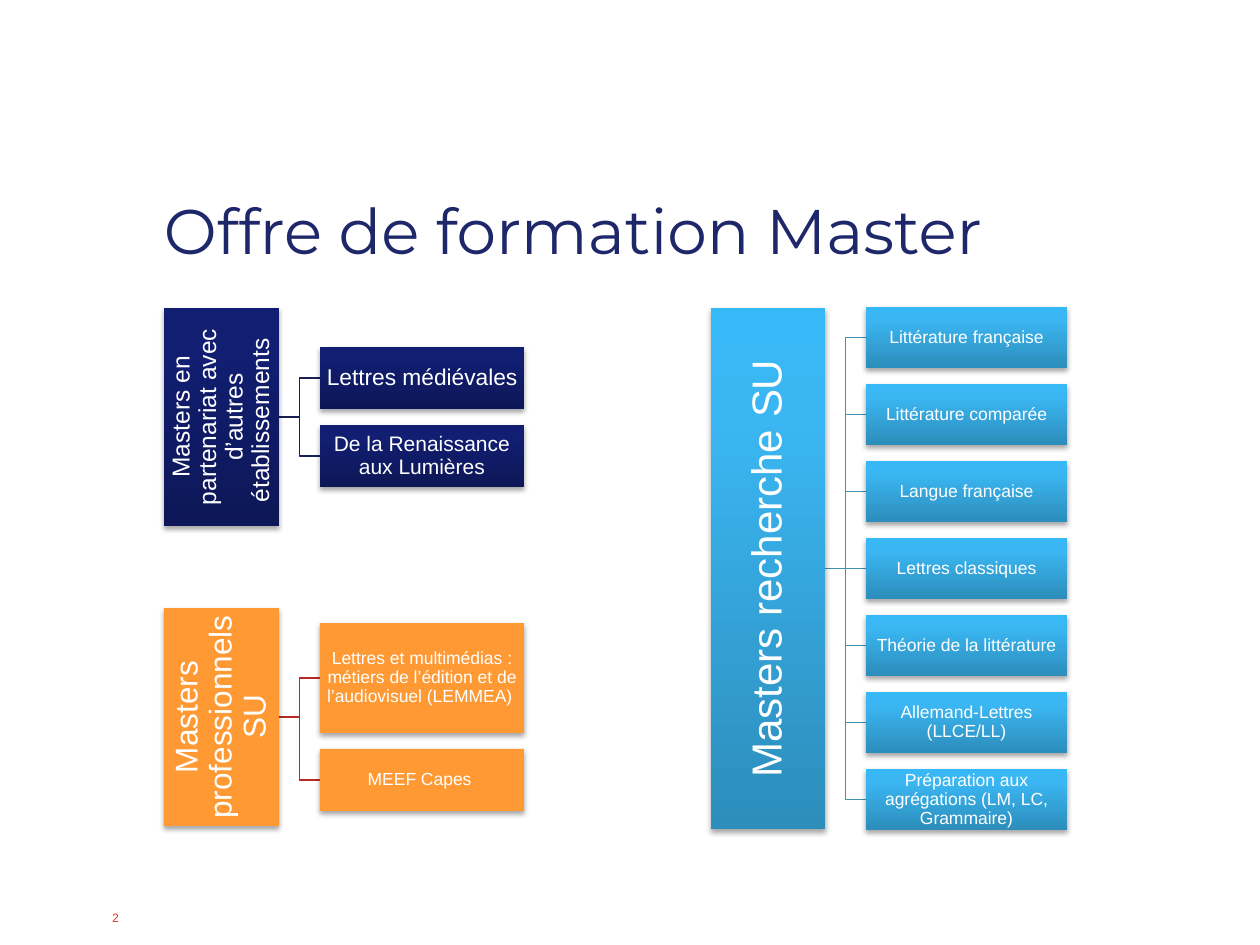
from lxml.etree import SubElement
from pptx import Presentation
from pptx.dml.color import RGBColor
from pptx.enum.shapes import MSO_CONNECTOR, MSO_SHAPE
from pptx.enum.text import MSO_ANCHOR, PP_ALIGN
from pptx.oxml.ns import qn
from pptx.util import Emu, Pt

PX_PER_INCH = 126
WHITE, NAVY, RED, ORANGE = "FFFFFF", "1D2769", "E6332A", "FF9933"
# Gradient stops run from the bottom of a box to its top.
NAVY_GRADIENT = [(0, "0D1757"), (80, "111E71"), (100, "0F1C73")]
BLUE_GRADIENT = [(0, "2D8DBB"), (80, "3AB7F3"), (100, "37B9F8")]
CHILD_GAP = 16
HEADER_GAP = 41

PARTNER_MASTERS = [("Lettres médiévales", 13, 62), ("De la Renaissance aux Lumières", 12, 62)]
PROFESSIONAL_MASTERS = [
    ("Lettres et multimédias : métiers de l’édition et de l’audiovisuel (LEMMEA) ", 10, 110),
    ("MEEF Capes ", 10, 62),
]
RESEARCH_MASTERS = [
    (name, 10, 61)
    for name in (
        "Littérature française",
        "Littérature comparée",
        "Langue française",
        "Lettres classiques",
        "Théorie de la littérature",
        "Allemand-Lettres (LLCE/LL)",
        "Préparation aux agrégations (LM, LC, Grammaire)",
    )
]


def px(length):
    return Emu(round(length * 914400 / PX_PER_INCH))


def color(hex_string):
    return RGBColor.from_string(hex_string)


class SlideBuilder:
    def __init__(self, slide, font="Arial"):
        self.slide = slide
        self.font = font

    def set_text(self, shape, text, size, hex_color, font=None, align=PP_ALIGN.LEFT,
                 anchor=MSO_ANCHOR.BOTTOM, insets=(5, 0), wrap=True):
        """Fill a shape with one formatted paragraph; insets are (sides, top and bottom)."""
        frame = shape.text_frame
        frame.word_wrap = wrap
        frame.vertical_anchor = anchor
        frame.margin_left = frame.margin_right = px(insets[0])
        frame.margin_top = frame.margin_bottom = px(insets[1])
        frame.text = text
        paragraph = frame.paragraphs[0]
        paragraph.alignment = align
        paragraph.line_spacing = 0.9
        run_font = paragraph.runs[0].font
        run_font.name = font or self.font
        run_font.size = Pt(size)
        run_font.color.rgb = color(hex_color)

    def label(self, text, left, top, width, height, size, hex_color, **options):
        shape = self.slide.shapes.add_textbox(px(left), px(top), px(width), px(height))
        self.set_text(shape, text, size, hex_color, **options)

    def paint(self, shape, fill):
        """Apply a plain colour, or a vertical gradient given as a list of stops."""
        if isinstance(fill, str):
            shape.fill.solid()
            shape.fill.fore_color.rgb = color(fill)
            return
        shape.fill.gradient()
        shape.fill.gradient_angle = 90
        stop_list = shape.element.spPr.find(".//" + qn("a:gsLst"))
        for stop in list(stop_list):
            stop_list.remove(stop)
        for position, hex_color in fill:
            stop = SubElement(stop_list, qn("a:gs"), pos=str(position * 1000))
            SubElement(stop, qn("a:srgbClr"), val=hex_color)

    def add_shadow(self, shape):
        shape.shadow.inherit = False
        effects = shape.element.spPr.find(qn("a:effectLst"))
        shadow = SubElement(effects, qn("a:outerShdw"), blurRad=str(Pt(3.1)),
                            dist=str(Pt(1.8)), dir="5400000", rotWithShape="0")
        shadow_color = SubElement(shadow, qn("a:srgbClr"), val="000000")
        SubElement(shadow_color, qn("a:alpha"), val="35000")

    def box(self, text, left, top, width, height, size, fill, upward=False):
        shape = self.slide.shapes.add_shape(
            MSO_SHAPE.RECTANGLE, px(left), px(top), px(width), px(height))
        self.paint(shape, fill)
        shape.line.fill.background()
        self.add_shadow(shape)
        self.set_text(shape, text, size, WHITE, align=PP_ALIGN.CENTER,
                      anchor=MSO_ANCHOR.MIDDLE, insets=(1, 1))
        if upward:
            shape.element.find(".//" + qn("a:bodyPr")).set("vert", "vert270")

    def link(self, x1, y1, x2, y2, hex_color):
        kind = MSO_CONNECTOR.STRAIGHT if y1 == y2 else MSO_CONNECTOR.ELBOW
        connector = self.slide.shapes.add_connector(kind, px(x1), px(y1), px(x2), px(y2))
        connector.line.color.rgb = color(hex_color)
        connector.line.width = Pt(0.75)
        SubElement(connector.element.spPr, qn("a:effectLst"))

    def tree(self, title, title_size, left, top, width, height, children, child_width,
             fill, line_color):
        """Draw a vertical header linked to a stack of boxes centred beside it."""
        child_left = left + width + HEADER_GAP
        stack_height = sum(child[2] for child in children) + CHILD_GAP * (len(children) - 1)
        middle = top + height / 2
        child_top = middle - stack_height / 2
        for text, size, child_height in children:
            self.link(left + width, middle, child_left, child_top + child_height / 2, line_color)
            self.box(text, child_left, child_top, child_width, child_height, size, fill)
            child_top += child_height + CHILD_GAP
        self.box(title, left, top, width, height, title_size, fill, upward=True)


def main():
    presentation = Presentation()
    presentation.slide_width, presentation.slide_height = px(1260), px(945)
    builder = SlideBuilder(presentation.slides.add_slide(presentation.slide_layouts[6]))

    builder.label("2", 107, 910, 32, 15, 7, RED, wrap=False)
    builder.label("Offre de formation Master", 159, 136, 1038, 132, 36, NAVY, font="Montserrat")
    builder.tree("Masters en partenariat avec d’autres établissements ", 14,
                 164, 308, 115, 218, PARTNER_MASTERS, 204, NAVY_GRADIENT, "171F54")
    builder.tree("Masters professionnels SU", 18,
                 164, 608, 115, 218, PROFESSIONAL_MASTERS, 204, ORANGE, "B82922")
    builder.tree("Masters recherche SU", 24,
                 711, 308, 114, 521, RESEARCH_MASTERS, 201, BLUE_GRADIENT, "4291B7")

    presentation.save("out.pptx")


if __name__ == "__main__":
    main()
